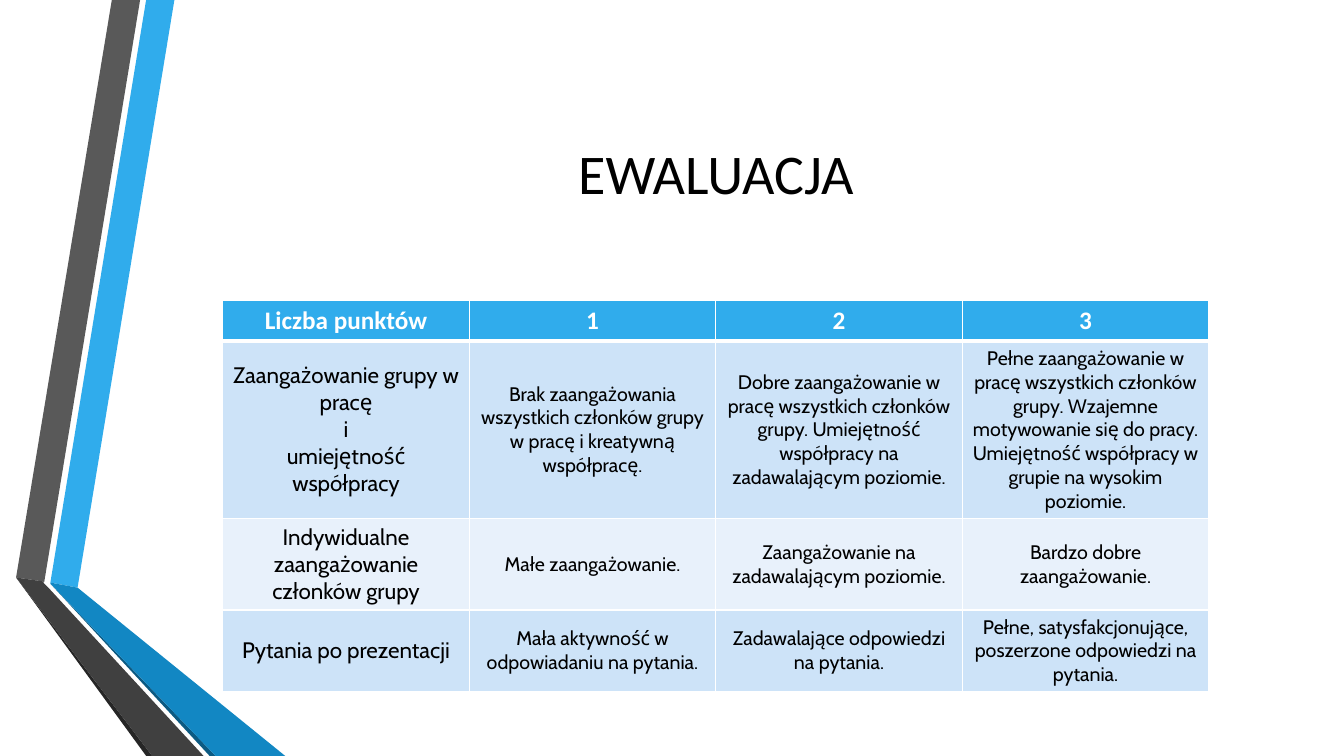
"""Build the evaluation slide: folded ribbons, a title and a scoring table."""
from dataclasses import dataclass

from lxml.etree import SubElement
from pptx import Presentation
from pptx.dml.color import RGBColor
from pptx.enum.text import MSO_ANCHOR, PP_ALIGN
from pptx.oxml.ns import qn
from pptx.util import Inches, Pt


@dataclass(frozen=True)
class Theme:
    white: str = "FFFFFF"
    black: str = "000000"
    blue: str = "30ACEC"
    blue_fold: str = "1287C3"
    blue_edge: str = "0C5A82"
    gray: str = "595959"
    gray_fold: str = "404040"
    gray_edge: str = "262626"
    bands: tuple = ("CDE3F8", "E8F1FB")
    heading_font: str = "Calibri"
    body_font: str = "Cabin"
    title_size: int = 40
    header_size: int = 18
    criterion_size: int = 16
    level_size: int = 14


def format_text(paragraph, font, size, color, bold=False):
    paragraph.alignment = PP_ALIGN.CENTER
    looks = {"name": font, "size": Pt(size), "bold": bold}
    for run in paragraph.runs:
        for key, value in looks.items():
            setattr(run.font, key, value)
        run.font.color.rgb = RGBColor.from_string(color)


def add_borders(cell, color, widths):
    properties = cell._tc.get_or_add_tcPr()
    for side, width in widths.items():
        line = SubElement(properties, qn(f"a:ln{side}"), w=str(Pt(width)))
        SubElement(SubElement(line, qn("a:solidFill")), qn("a:srgbClr"), val=color)


theme = Theme()
deck = Presentation()
deck.slide_width, deck.slide_height = Inches(13.33), Inches(7.5)
slide = deck.slides.add_slide(deck.slide_layouts[5])

ribbons = [
    (theme.blue, [(0.5, 5.78), (0.77, 5.83), (1.73, 0), (1.45, 0)]),
    (theme.gray, [(1.39, 0), (1.11, 0), (0.16, 5.73), (0.44, 5.77)]),
    (theme.gray_edge, [(0.16, 5.73), (1.45, 7.5), (1.51, 7.5)]),
    (theme.blue_edge, [(0.5, 5.79), (2.08, 7.5), (2.14, 7.5)]),
    (theme.blue_fold, [(0.5, 5.78), (0.5, 5.79), (2.14, 7.5), (2.83, 7.5), (0.77, 5.83)]),
    (theme.gray_fold, [(2.02, 7.5), (0.48, 5.83), (0.43, 5.78), (0.44, 5.77),
                       (0.16, 5.73), (1.51, 7.5)]),
]
for color, corners in ribbons:
    start, *others = [(Inches(x), Inches(y)) for x, y in corners]
    outline = slide.shapes.build_freeform(*start)
    outline.add_line_segments(others, close=True)
    ribbon = outline.convert_to_shape()
    ribbon.shadow.inherit = False
    ribbon.fill.solid()
    ribbon.fill.fore_color.rgb = RGBColor.from_string(color)
    ribbon.line.fill.background()

title = slide.shapes.title
title_box = {"left": 1.62, "top": 0.75, "width": 10.96, "height": 1.92}
for key, value in title_box.items():
    setattr(title, key, Inches(value))
title.text_frame.text = "EWALUACJA"
title.text_frame.vertical_anchor = MSO_ANCHOR.MIDDLE
format_text(title.text_frame.paragraphs[0], theme.heading_font, theme.title_size, theme.black)

scores = [
    ("Liczba punktów", "1", "2", "3"),
    ("Zaangażowanie grupy w pracę\ni\numiejętność współpracy",
     "Brak zaangażowania wszystkich członków grupy w pracę i kreatywną współpracę.",
     "Dobre zaangażowanie w pracę wszystkich członków grupy. "
     "Umiejętność współpracy na zadawalającym poziomie.",
     "Pełne zaangażowanie w pracę wszystkich członków grupy. Wzajemne motywowanie "
     "się do pracy. Umiejętność współpracy w grupie na wysokim poziomie."),
    ("Indywidualne zaangażowanie członków grupy",
     "Małe zaangażowanie.",
     "Zaangażowanie na zadawalającym poziomie.",
     "Bardzo dobre zaangażowanie."),
    ("Pytania po prezentacji",
     "Mała aktywność w odpowiadaniu na pytania.",
     "Zadawalające odpowiedzi na pytania.",
     "Pełne, satysfakcjonujące, poszerzone odpowiedzi na pytania."),
]
row_heights = [0.4, 1.75, 0.91, 0.81]
rubric = slide.shapes.add_table(
    len(scores), len(scores[0]),
    Inches(2.21), Inches(2.98), Inches(9.78), Inches(sum(row_heights))).table

for row, (height, texts) in enumerate(zip(row_heights, scores)):
    rubric.rows[row].height = Inches(height)
    header = row == 0
    for column, text in enumerate(texts):
        cell = rubric.cell(row, column)
        add_borders(cell, theme.white, {"L": 1, "R": 1, "T": 1, "B": 3 if header else 1})
        cell.fill.solid()
        band = theme.blue if header else theme.bands[(row - 1) % 2]
        cell.fill.fore_color.rgb = RGBColor.from_string(band)
        paragraph = cell.text_frame.paragraphs[0]
        paragraph.text = text
        if header:
            format_text(paragraph, theme.heading_font, theme.header_size, theme.white, True)
        else:
            cell.vertical_anchor = MSO_ANCHOR.MIDDLE
            size = theme.level_size if column else theme.criterion_size
            format_text(paragraph, theme.body_font, size, theme.black)

deck.save("out.pptx")
